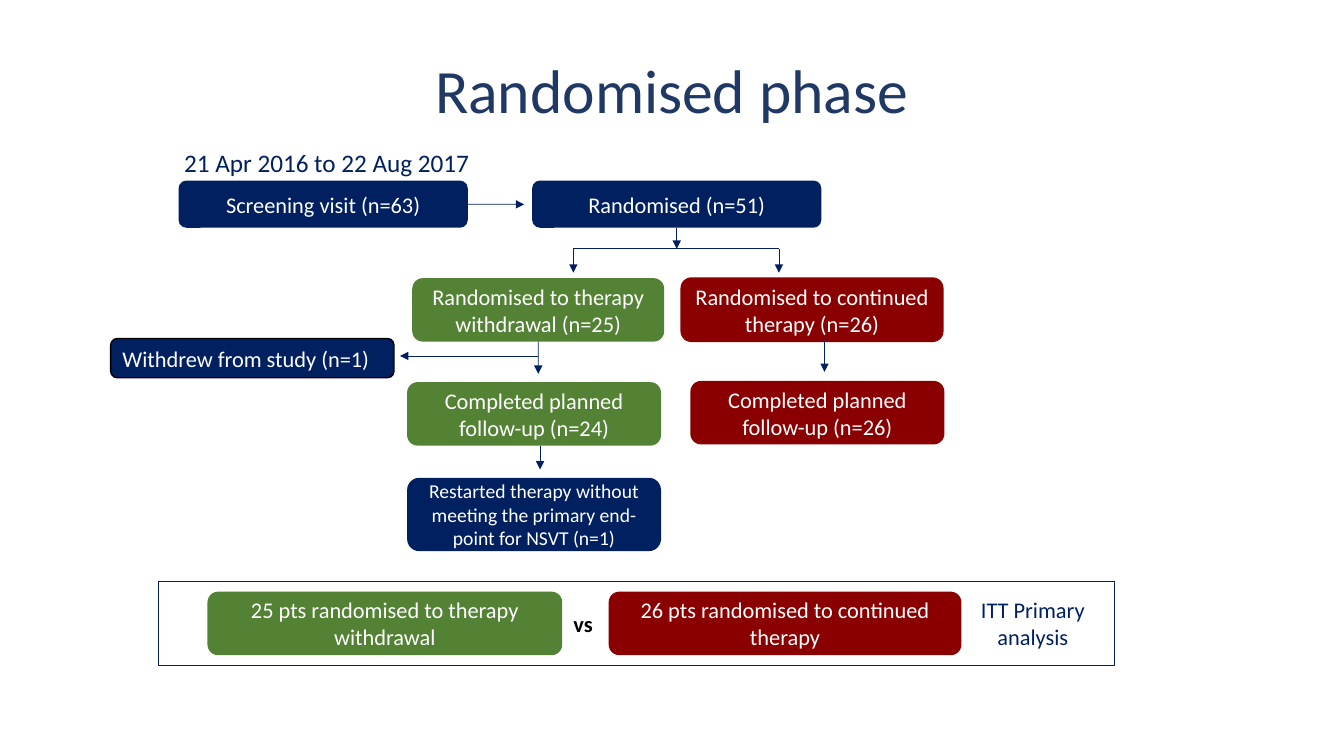
from lxml.etree import SubElement
from pptx import Presentation
from pptx.dml.color import RGBColor
from pptx.enum.shapes import MSO_CONNECTOR, MSO_SHAPE
from pptx.enum.text import MSO_ANCHOR, PP_ALIGN
from pptx.oxml.ns import qn
from pptx.util import Cm, Pt

COLORS = {
    "navy": "002060", "title": "203864", "green": "548235",
    "red": "8A0000", "white": "FFFFFF", "black": "000000",
}
BOTTOM, RIGHT = 2, 3


def rgb(name):
    return RGBColor.from_string(COLORS[name])


def write(frame, text, size, color, align=PP_ALIGN.CENTER, bold=False):
    """Put one paragraph per line of text, each with one run."""
    for index, line in enumerate(text.split("\n")):
        paragraph = frame.paragraphs[0] if index == 0 else frame.add_paragraph()
        paragraph.alignment = align
        run = paragraph.add_run()
        run.text = line
        run.font.name = "Calibri"
        run.font.size = Pt(size)
        run.font.bold = bold
        run.font.color.rgb = rgb(color)


def add_panel(slide, left, top, width, height, fill=None, line=None,
              weight=1, kind=MSO_SHAPE.ROUNDED_RECTANGLE):
    panel = slide.shapes.add_shape(kind, Cm(left), Cm(top), Cm(width), Cm(height))
    panel.shadow.inherit = False
    if fill:
        panel.fill.solid()
        panel.fill.fore_color.rgb = rgb(fill)
    else:
        panel.fill.background()
    if line:
        panel.line.color.rgb = rgb(line)
        panel.line.width = Pt(weight)
    else:
        panel.line.fill.background()
    return panel


def add_step(slide, left, top, width, height, text, fill, size=16, color="white",
             line=None, align=PP_ALIGN.CENTER, bold=False):
    step = add_panel(slide, left, top, width, height, fill, line)
    step.text_frame.word_wrap = True
    step.text_frame.vertical_anchor = MSO_ANCHOR.MIDDLE
    write(step.text_frame, text, size, color, align, bold)
    return step


def add_link(slide, x1, y1, x2, y2, arrow=True, source=None, side=BOTTOM):
    link = slide.shapes.add_connector(
        MSO_CONNECTOR.STRAIGHT, Cm(x1), Cm(y1), Cm(x2), Cm(y2))
    if source is not None:
        link.begin_connect(source, side)
    link.line.color.rgb = rgb("navy")
    link.line.width = Pt(0.5)
    if arrow:
        SubElement(link.line._get_or_add_ln(), qn("a:tailEnd"), type="triangle")
    SubElement(link._element.spPr, qn("a:effectLst"))


def add_title(slide, left, top, width, height):
    heading = slide.shapes.add_textbox(Cm(left), Cm(top), Cm(width), Cm(height))
    frame = heading.text_frame
    frame.word_wrap = True
    frame.vertical_anchor = MSO_ANCHOR.MIDDLE
    write(frame, "Randomised phase", 44, "title")
    frame.paragraphs[0].line_spacing = 0.9


def add_flow(slide, left, top):
    def step(x, y, width, height, *content, **style):
        return add_step(slide, left + x, top + y, width, height, *content, **style)

    def link(x1, y1, x2, y2, **options):
        add_link(slide, left + x1, top + y1, left + x2, top + y2, **options)

    # Study period
    period = slide.shapes.add_textbox(Cm(left + 1.6), Cm(top), Cm(7.77), Cm(1.02))
    period.text_frame.word_wrap = False
    write(period.text_frame, "21 Apr 2016 to 22 Aug 2017", 18, "navy", PP_ALIGN.LEFT)

    # Screening and randomisation
    screening = step(1.71, 0.97, 7.29, 1.19, "Screening visit (n=63)", "navy")
    randomised = step(10.62, 0.97, 7.29, 1.19, "Randomised (n=51)", "navy")

    # Withdrawal arm
    withdrawal = step(7.6, 3.43, 6.35, 1.6,
                      "Randomised to therapy withdrawal (n=25)", "green")
    step(7.47, 6.05, 6.4, 1.6, "Completed planned follow-up (n=24)", "green")
    step(7.47, 8.46, 6.4, 1.85, "Restarted therapy without meeting the primary "
         "end-point for NSVT (n=1)", "navy", size=14)
    step(0, 4.95, 7.14, 0.99, "Withdrew from study (n=1)", "navy",
         line="black", align=PP_ALIGN.LEFT)

    # Continued arm
    step(14.36, 3.41, 6.63, 1.63, "Randomised to continued therapy (n=26)", "red")
    step(14.61, 6.02, 6.4, 1.6, "Completed planned follow-up (n=26)", "red")

    # Fork into the two arms
    fork_left, fork_right, fork_y = 11.66, 16.84, 2.69
    randomised_x = 10.62 + 7.29 / 2
    link(9, 1.57, 10.42, 1.57, source=screening, side=RIGHT)
    link(randomised_x, 2.16, randomised_x, fork_y, source=randomised)
    link(fork_left, fork_y, fork_right, fork_y, arrow=False)
    for arm_x in (fork_left, fork_right):
        link(arm_x, fork_y, arm_x, 3.29)

    # Steps down each arm and the exit to the side
    withdrawal_x = 7.6 + 6.35 / 2
    link(withdrawal_x, 5.03, withdrawal_x, 5.84, source=withdrawal)
    link(withdrawal_x, 5.39, 7.29, 5.39)
    link(10.82, 7.67, 10.82, 8.25)
    link(17.99, 4.98, 17.99, 5.79)


def add_analysis(slide, left, top, width, height):
    add_panel(slide, left, top, width, height, line="navy", weight=0.75,
              kind=MSO_SHAPE.RECTANGLE)
    groups = [
        (8.99, 3.43, "vs", "white", {"color": "black", "line": "white", "bold": True}),
        (20.29, 3.5, "ITT Primary\nanalysis", "white",
         {"color": "navy", "line": "white"}),
        (1.24, 8.94, "25 pts randomised to therapy withdrawal", "green", {}),
        (11.35, 8.89, "26 pts randomised to continued therapy", "red", {}),
    ]
    for x, group_width, text, fill, style in groups:
        add_step(slide, left + x, top + 0.25, group_width, 1.6, text, fill, **style)


def main():
    deck = Presentation()
    deck.slide_width, deck.slide_height = Cm(33.87), Cm(19.05)
    slide = deck.slides.add_slide(deck.slide_layouts[6])
    add_title(slide, 2.33, 0.51, 29.21, 3.68)
    add_flow(slide, 2.79, 3.58)
    add_analysis(slide, 3.99, 14.66, 24.1, 2.11)
    deck.save("out.pptx")


if __name__ == "__main__":
    main()
